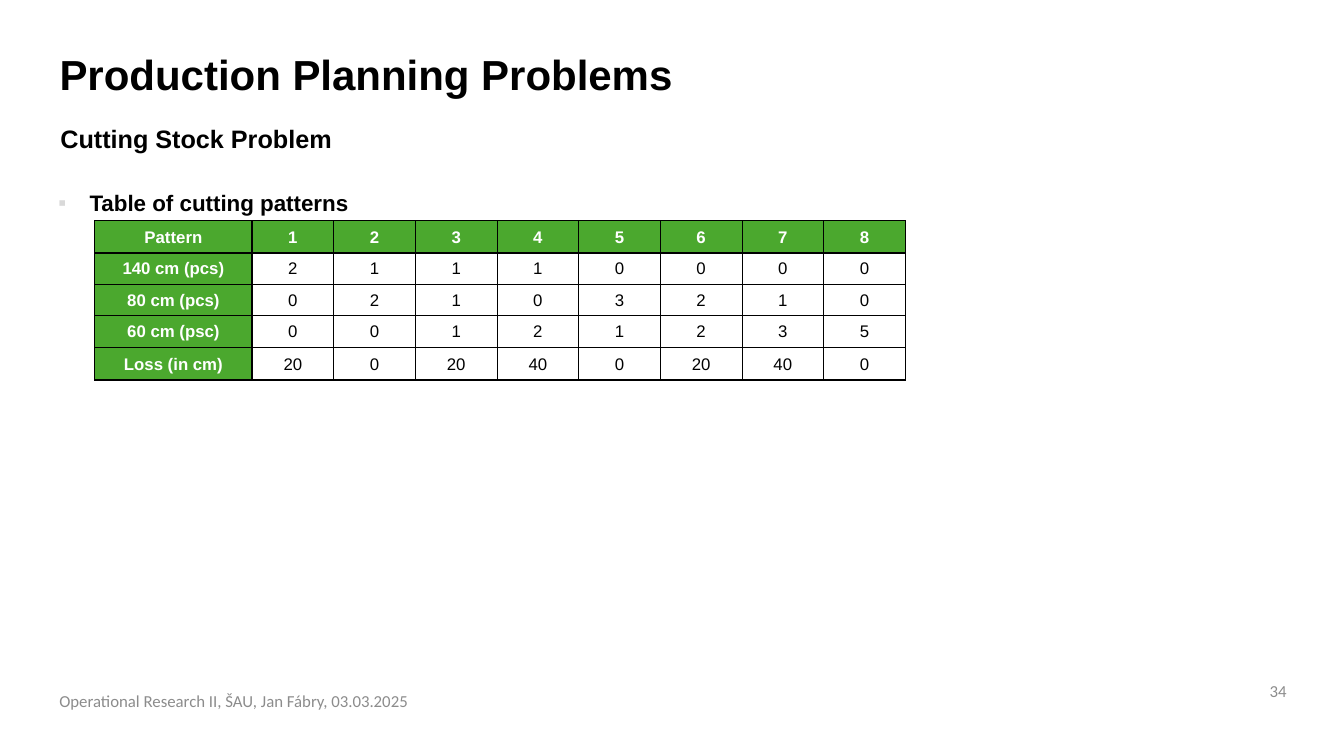
import pptx
import pptx.util
import pptx.dml.color
import pptx.enum.text
import pptx.oxml.ns
from lxml import etree

Inches, Pt = pptx.util.Inches, pptx.util.Pt
ALIGN, ANCHOR = pptx.enum.text.PP_ALIGN, pptx.enum.text.MSO_ANCHOR

HEADING = "Production Planning Problems"
SUBHEADING = "Cutting Stock Problem"
CAPTION = "Table of cutting patterns"
FOOTER = "Operational Research II, ŠAU, Jan Fábry, 03.03.2025"
PAGE = "34"
PATTERNS = [
    ("Pattern", 1, 2, 3, 4, 5, 6, 7, 8),
    ("140 cm (pcs)", 2, 1, 1, 1, 0, 0, 0, 0),
    ("80 cm (pcs)", 0, 2, 1, 0, 3, 2, 1, 0),
    ("60 cm (psc)", 0, 0, 1, 2, 1, 2, 3, 5),
    ("Loss (in cm)", 20, 0, 20, 40, 0, 20, 40, 0),
]
ROW_HEIGHTS = (0.32, 0.31, 0.31, 0.32, 0.32)
LABEL_WIDTH, VALUE_WIDTH = 1.56, 0.81
THICK_ROW_EDGES, THICK_COLUMN_EDGES = (0, 1, 4, 5), (0, 1)
BLACK, WHITE, GREEN, GREY, PALE = "000000", "FFFFFF", "4BA82E", "8C8C8C", "D9D9D9"


def rgb(color):
    return pptx.dml.color.RGBColor.from_string(color)


def add_node(parent, tag, **attributes):
    return etree.SubElement(parent, pptx.oxml.ns.qn(tag), attributes)


def write(frame, text, size, color, font="Arial", bold=False, align=ALIGN.LEFT):
    paragraph = frame.paragraphs[0]
    paragraph.alignment = align
    run = paragraph.add_run()
    run.text = text
    run.font.size, run.font.name, run.font.bold = Pt(size), font, bold
    run.font.color.rgb = rgb(color)
    return paragraph


def place(shape, box, anchor=ANCHOR.TOP, wrap=True):
    shape.left, shape.top, shape.width, shape.height = map(Inches, box)
    frame = shape.text_frame
    frame.word_wrap, frame.vertical_anchor = wrap, anchor
    frame.auto_size = pptx.enum.text.MSO_AUTO_SIZE.NONE
    return frame


def add_text(box, **layout):
    return place(slide.shapes.add_textbox(0, 0, 0, 0), box, **layout)


def add_border(cell, side, thick):
    line = add_node(cell._tc.get_or_add_tcPr(), "a:ln" + side, w=str(Pt(1 if thick else 0.5)))
    add_node(add_node(line, "a:solidFill"), "a:srgbClr", val=BLACK)


prs = pptx.Presentation()
prs.slide_width, prs.slide_height = Inches(13.33), Inches(7.5)
slide = prs.slides.add_slide(prs.slide_layouts[5])

heading = place(slide.shapes.title, (0.49, 0.49, 10.13, 0.57))
write(heading, HEADING, 30, BLACK, bold=True).line_spacing = 0.9
write(add_text((0.5, 1.17, 10.11, 0.4)), SUBHEADING, 18, BLACK, bold=True)

caption = add_text((0.48, 1.8, 10.13, 0.4))
caption_line = write(caption, CAPTION, 16, BLACK, bold=True)
caption_line.line_spacing = 1.1
bullet = caption_line._p.get_or_add_pPr()
bullet.set("marL", str(Inches(0.31)))
bullet.set("indent", str(Inches(-0.31)))
add_node(add_node(bullet, "a:buClr"), "a:srgbClr", val=PALE)
add_node(bullet, "a:buFont", typeface="Arial")
add_node(bullet, "a:buChar", char="▪")

write(add_text((0.49, 6.75, 7.17, 0.4), anchor=ANCHOR.MIDDLE), FOOTER, 12, GREY, "Calibri")
write(add_text((12.51, 6.69, 0.35, 0.33), anchor=ANCHOR.MIDDLE, wrap=False),
      PAGE, 12, GREY, "Calibri", align=ALIGN.RIGHT)

column_widths = [LABEL_WIDTH] + [VALUE_WIDTH] * (len(PATTERNS[0]) - 1)
table = slide.shapes.add_table(
    len(PATTERNS), len(column_widths), Inches(0.94), Inches(2.19),
    Inches(sum(column_widths)), Inches(sum(ROW_HEIGHTS))).table
for column, width in zip(table.columns, column_widths):
    column.width = Inches(width)
for row, height in zip(table.rows, ROW_HEIGHTS):
    row.height = Inches(height)

for r, pattern_row in enumerate(PATTERNS):
    for c, value in enumerate(pattern_row):
        cell = table.cell(r, c)
        header = r == 0 or c == 0
        cell.margin_left = cell.margin_right = cell.margin_top = Inches(0.01)
        cell.margin_bottom = 0
        cell.vertical_anchor = ANCHOR.MIDDLE
        add_border(cell, "L", c in THICK_COLUMN_EDGES)
        add_border(cell, "R", c + 1 in THICK_COLUMN_EDGES)
        add_border(cell, "T", r in THICK_ROW_EDGES)
        add_border(cell, "B", r + 1 in THICK_ROW_EDGES)
        cell.fill.solid()
        cell.fill.fore_color.rgb = rgb(GREEN if header else WHITE)
        write(cell.text_frame, str(value), 12, WHITE if header else BLACK,
              bold=header, align=ALIGN.CENTER)

prs.save("out.pptx")
